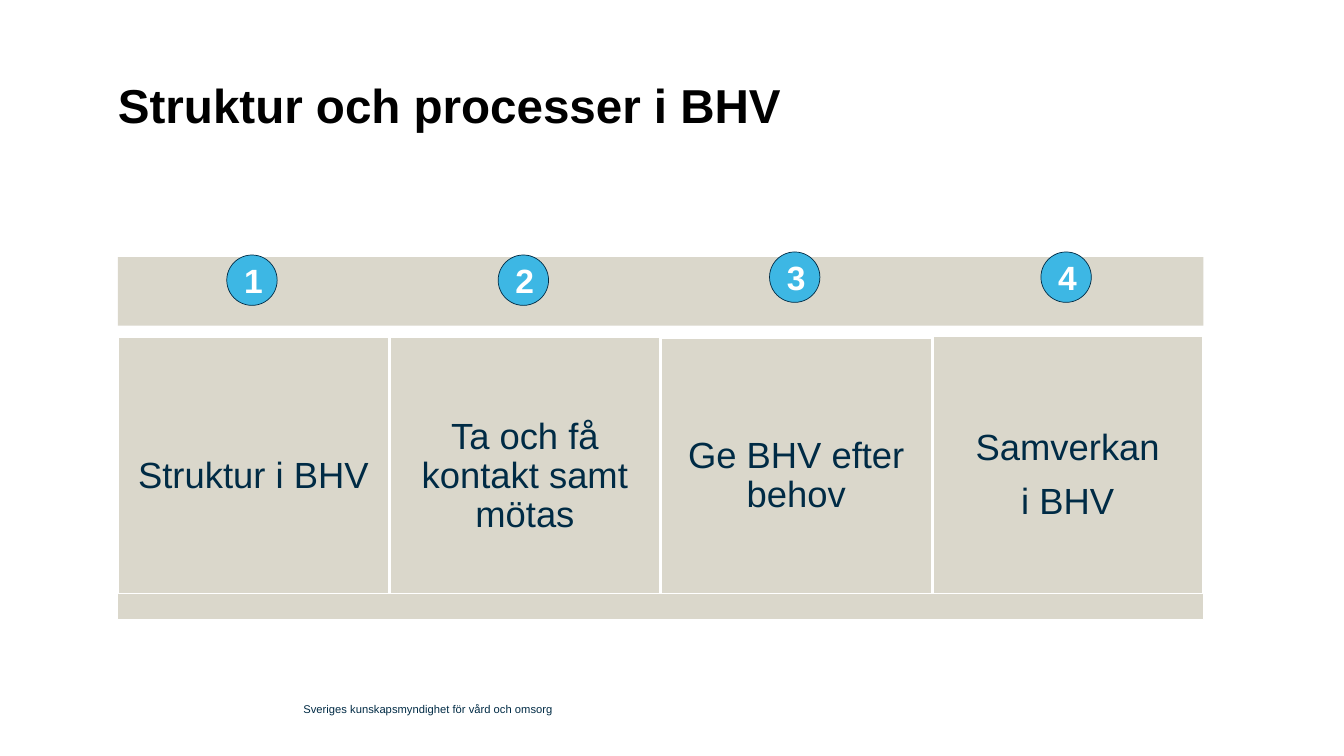
import pptx
import pptx.util
import pptx.dml.color
import pptx.enum.shapes
import pptx.enum.text

Pt = pptx.util.Pt
RGB = pptx.dml.color.RGBColor.from_string
SHAPES = pptx.enum.shapes.MSO_SHAPE
ALIGN = pptx.enum.text.PP_ALIGN
ANCHOR = pptx.enum.text.MSO_ANCHOR

THEME = {
    "font": "Arial",
    "black": RGB("000000"), "white": RGB("FFFFFF"), "navy": RGB("002B45"),
    "sand": RGB("DAD7CB"), "sky": RGB("3DB7E4"),
    "title": Pt(34), "step": Pt(26), "number": Pt(24), "footer": Pt(8),
}
LEFT, WIDTH, STEP = 84.24, 775.4, 193.85


def add_block(kind, box, fill, line=None, line_width=0):
    block = slide.shapes.add_shape(kind, *map(Pt, box))
    block.shadow.inherit = False
    block.fill.solid()
    block.fill.fore_color.rgb = THEME[fill]
    if line:
        block.line.color.rgb = THEME[line]
        block.line.width = Pt(line_width)
    else:
        block.line.fill.background()
    return block


def write(frame, lines, size, color, bold, align, anchor, inset=None, **spacing):
    frame.word_wrap = True
    frame.auto_size = pptx.enum.text.MSO_AUTO_SIZE.NONE
    frame.vertical_anchor = anchor
    if inset is not None:
        for side in ("left", "top", "right", "bottom"):
            setattr(frame, f"margin_{side}", Pt(inset))
    frame.text = "\n".join(lines)
    font_format = {"name": THEME["font"], "size": THEME[size], "bold": bold}
    for paragraph in frame.paragraphs:
        for name, value in {"alignment": align, **spacing}.items():
            setattr(paragraph, name, value)
        for run in paragraph.runs:
            for name, value in font_format.items():
                setattr(run.font, name, value)
            run.font.color.rgb = THEME[color]


deck = pptx.Presentation()
deck.slide_width, deck.slide_height = Pt(960), Pt(540)
slide = deck.slides.add_slide(deck.slide_layouts[5])

heading = slide.shapes.title
heading.left, heading.top, heading.width, heading.height = map(Pt, (LEFT, 54, 730.8, 102.24))
write(heading.text_frame, ["Struktur och processer i BHV"], "title", "black", True,
      ALIGN.LEFT, ANCHOR.TOP, 0)

add_block(SHAPES.RECTANGLE, (LEFT, 183.6, WIDTH, 48.96), "sand")

steps = [
    (["Struktur i BHV"], 240.48, 200.16, 182.16),
    (["Ta och få kontakt samt mötas"], 240.48, 200.16, 182.16),
    (["Ge BHV efter behov"], 241.2, 198, 180),
    (["Samverkan", "i BHV"], 239.76, 200.16, 180),
]
for index, (lines, top, height, _) in enumerate(steps):
    step = add_block(SHAPES.RECTANGLE, (LEFT + index * STEP, top, STEP, height),
                     "sand", "white", 2)
    write(step.text_frame, lines, "step", "navy", False, ALIGN.CENTER, ANCHOR.MIDDLE, 8,
          line_spacing=0.9, space_after=Pt(10))

add_block(SHAPES.RECTANGLE, (LEFT, 424.08, WIDTH, 18.72), "sand", "white", 0.75)

for index, (_, _, _, top) in enumerate(steps):
    number = add_block(SHAPES.OVAL, (162 + index * STEP, top, 36, 36), "sky", "navy", 0.5)
    write(number.text_frame, [str(index + 1)], "number", "white", True,
          ALIGN.CENTER, ANCHOR.MIDDLE)

footer = slide.shapes.add_textbox(*map(Pt, (216.72, 496.08, 425.52, 20.88)))
write(footer.text_frame, ["Sveriges kunskapsmyndighet för vård och omsorg"], "footer",
      "navy", False, ALIGN.LEFT, ANCHOR.MIDDLE, 0)

deck.save("out.pptx")
